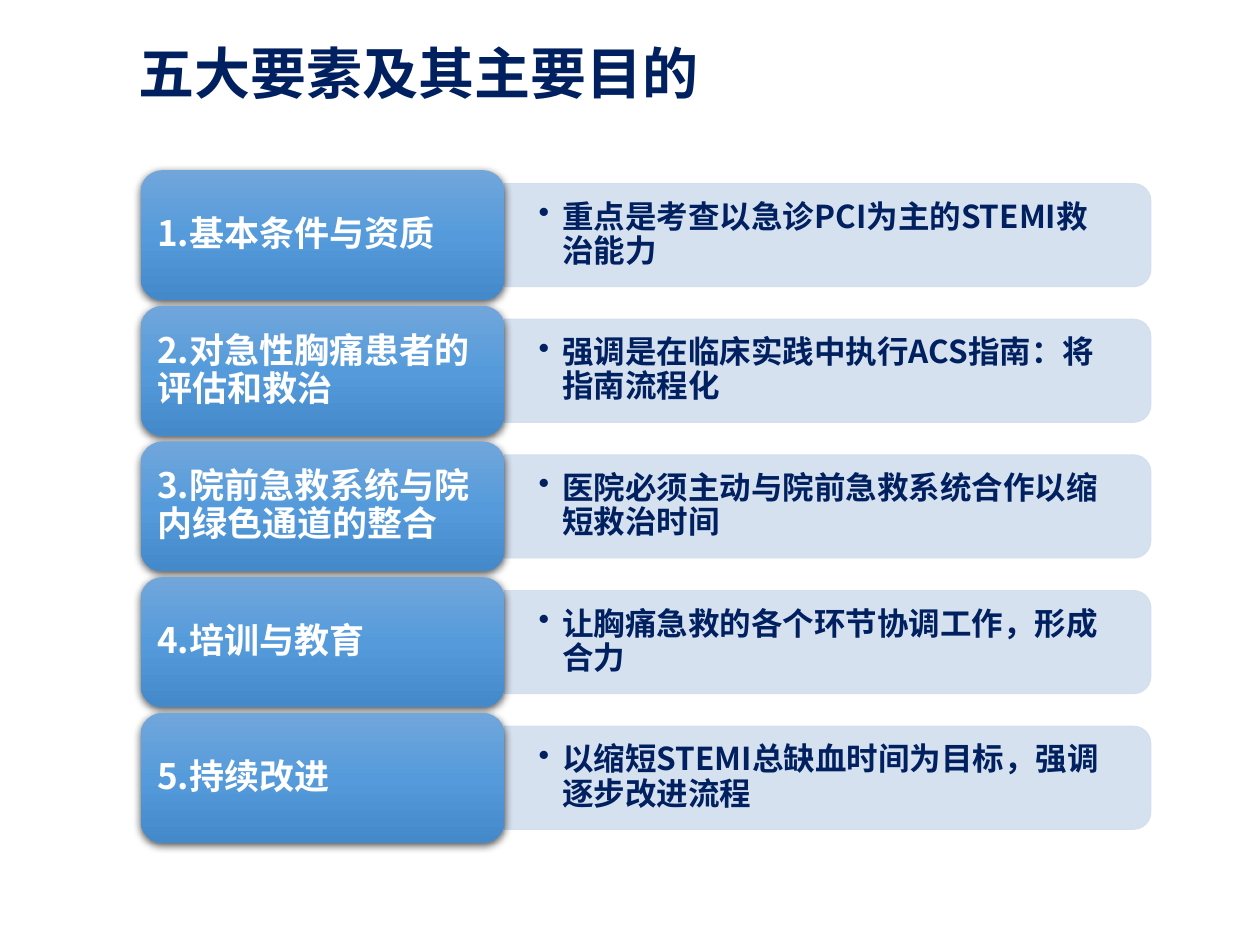
import copy
from dataclasses import dataclass

import pptx
import pptx.dml.color
import pptx.enum.shapes
import pptx.enum.text
import pptx.oxml.ns
import pptx.util
from lxml import etree

Cm = pptx.util.Cm
Pt = pptx.util.Pt
RGB = pptx.dml.color.RGBColor.from_string
SHAPE = pptx.enum.shapes.MSO_SHAPE
qn = pptx.oxml.ns.qn


@dataclass(frozen=True)
class Theme:
    font: str = "Noto Sans CJK SC"
    navy: str = "002060"
    white: str = "FFFFFF"
    panel: str = "D2DEEF"
    gradient: tuple = ((0, "71A6DB"), (0.5, "559BDB"), (1, "448ACA"))
    title_size: int = 32
    label_size: int = 20
    detail_size: int = 18


THEME = Theme()

TITLE = "五大要素及其主要目的"
ELEMENTS = [
    ("1.基本条件与资质", "重点是考查以急诊PCI为主的STEMI救治能力"),
    ("2.对急性胸痛患者的评估和救治", "强调是在临床实践中执行ACS指南：将指南流程化"),
    ("3.院前急救系统与院内绿色通道的整合", "医院必须主动与院前急救系统合作以缩短救治时间"),
    ("4.培训与教育", "让胸痛急救的各个环节协调工作，形成合力"),
    ("5.持续改进", "以缩短STEMI总缺血时间为目标，强调逐步改进流程"),
]


def set_attrs(obj, values):
    for name, value in values.items():
        setattr(obj, name, value)


def add_xml(parent, tag, **attrs):
    return etree.SubElement(parent, qn(tag), attrs)


def add_text(s, box, text, size, color, inset=(0.25, 0.13), after=0, bullet=False):
    """Place one bold, vertically centred paragraph; box and inset are in cm."""
    tf = s.shapes.add_textbox(*map(Cm, box)).text_frame
    side, edge = map(Cm, inset)
    set_attrs(tf, {
        "word_wrap": True,
        "vertical_anchor": pptx.enum.text.MSO_ANCHOR.MIDDLE,
        "margin_left": side, "margin_right": side,
        "margin_top": edge, "margin_bottom": edge,
    })
    p = tf.paragraphs[0]
    if bullet:
        pPr = p._p.get_or_add_pPr()
        pPr.set("marL", str(Cm(0.48)))
        pPr.set("indent", str(-Cm(0.48)))
        add_xml(pPr, "a:buChar", char="•")
        p.level = 1
    set_attrs(p, {"line_spacing": 0.9, "space_after": Pt(after)})
    r = p.add_run()
    r.text = text
    set_attrs(r.font, {"name": THEME.font, "size": Pt(size), "bold": True})
    r.font.color.rgb = RGB(color)
    add_xml(r._r.get_or_add_rPr(), "a:ea", typeface=THEME.font)


def add_detail(s, left, top, width, height, text):
    """Pale panel, rounded on its right side, with a bulleted purpose."""
    # The shape is drawn upright around the same centre, then turned.
    sp = s.shapes.add_shape(
        SHAPE.ROUND_2_SAME_RECTANGLE,
        Cm(left + (width - height) / 2), Cm(top + (height - width) / 2),
        Cm(height), Cm(width))
    sp.rotation = 90
    sp.shadow.inherit = False
    sp.fill.solid()
    sp.fill.fore_color.rgb = RGB(THEME.panel)
    sp.line.color.rgb = RGB(THEME.panel)
    sp.line.width = Pt(0.5)
    for clr in sp._element.spPr.findall(".//" + qn("a:srgbClr")):
        add_xml(clr, "a:alpha", val="90000")
    add_text(s, (left, top + 0.1, width - 0.1, height - 0.2), text,
             THEME.detail_size, THEME.navy, (0.69, 0.36), 2.7, bullet=True)


def add_label(s, left, top, width, height, text):
    """Blue gradient tile with a soft shadow and the element's name."""
    sp = s.shapes.add_shape(SHAPE.ROUNDED_RECTANGLE,
                            *map(Cm, (left, top, width, height)))
    sp.line.fill.background()
    sp.fill.gradient()
    sp.fill.gradient_angle = 270
    spPr = sp._element.spPr
    stops = spPr.find(".//" + qn("a:gsLst"))
    stops.append(copy.deepcopy(stops[-1]))
    for stop, (position, color) in zip(sp.fill.gradient_stops, THEME.gradient):
        stop.position = position
        stop.color.rgb = RGB(color)

    sp.shadow.inherit = False
    shadow = add_xml(spPr.find(qn("a:effectLst")), "a:outerShdw",
                     blurRad=str(Pt(4.5)), dist=str(Pt(1.5)), dir="5400000",
                     algn="ctr", rotWithShape="0")
    add_xml(add_xml(shadow, "a:srgbClr", val="000000"), "a:alpha", val="63000")

    pad = 0.13
    add_text(s, (left + pad, top + pad, width - 2 * pad, height - 2 * pad), text,
             THEME.label_size, THEME.white, (0.2, 0.1), 7)


def add_element_list(s, left, top, width, height):
    """Rows of label and detail, spread evenly over the box."""
    label_w, label_h, detail_h = 7.33, 2.62, 2.08
    pitch = (height - label_h) / (len(ELEMENTS) - 1)
    for i, (label, detail) in enumerate(ELEMENTS):
        y = top + i * pitch
        add_detail(s, left + label_w, y + (label_h - detail_h) / 2,
                   width - label_w, detail_h, detail)
        add_label(s, left, y, label_w, label_h, label)


def main():
    prs = pptx.Presentation()
    set_attrs(prs, {"slide_width": Cm(25.4), "slide_height": Cm(19.05)})
    s = prs.slides.add_slide(prs.slide_layouts[6])

    # Title
    add_text(s, (2.54, 0.13, 22.86, 2.84), TITLE, THEME.title_size, THEME.navy)
    # Five elements and their purposes
    add_element_list(s, 2.84, 3.43, 20.36, 13.56)

    prs.save("out.pptx")


if __name__ == "__main__":
    main()
